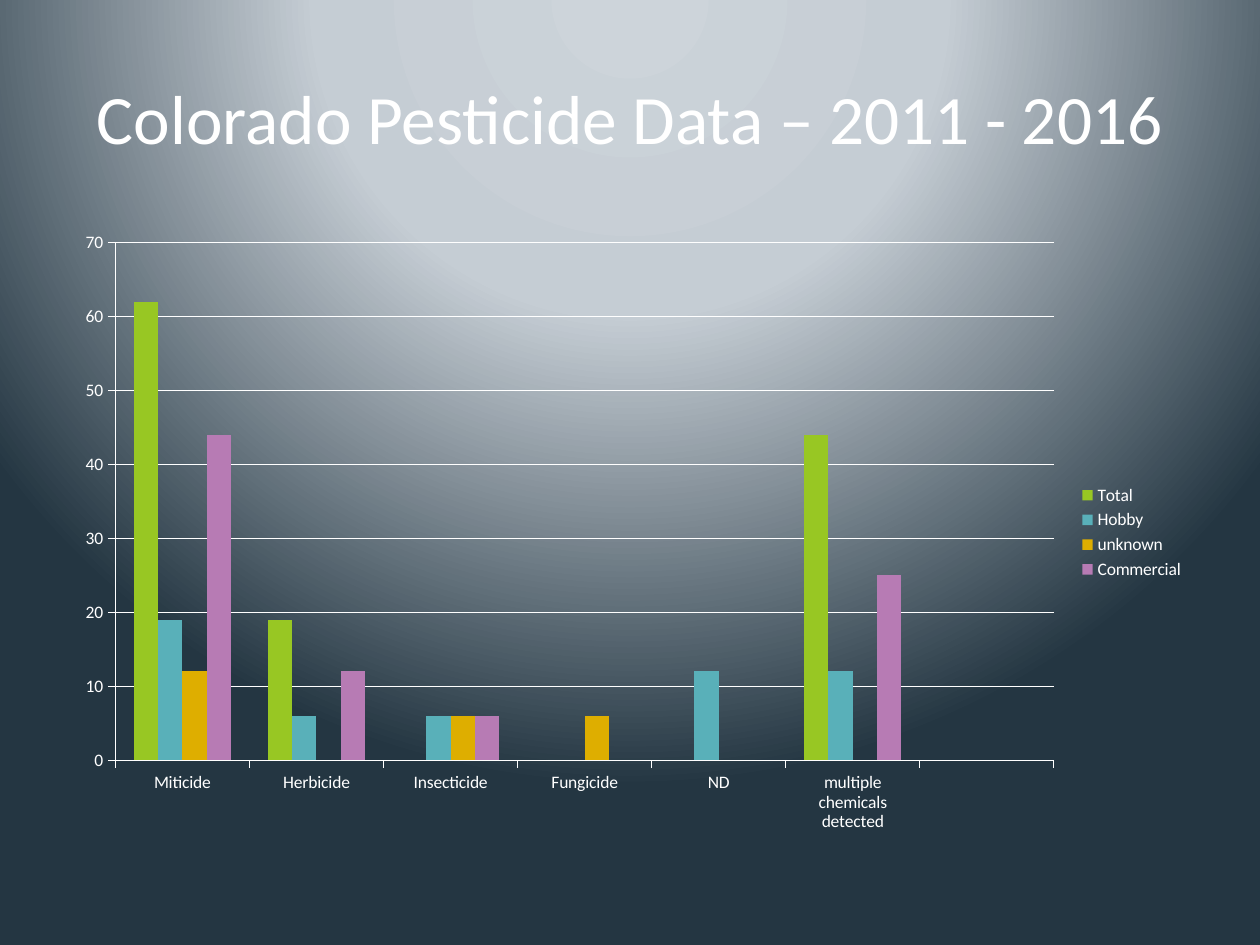
from lxml import etree
from pptx import Presentation
from pptx.chart.data import CategoryChartData as Data
from pptx.dml.color import RGBColor as RGB
from pptx.enum.chart import XL_CHART_TYPE as Kind, XL_LEGEND_POSITION as Side, XL_TICK_MARK as Tick
from pptx.enum.text import MSO_ANCHOR as Anchor, PP_ALIGN as Align
from pptx.util import Inches, Pt

FONT = "Calibri"
COLORS = {
    "text": "FFFFFF",
    "glow": "CDD4DA", "haze": "C5CDD4", "night": "243642",
    "Total": "98C723", "Hobby": "59B0B9", "unknown": "DEAE00", "Commercial": "B77BB4",
}
GROUPS = ["Miticide", "Herbicide", "Insecticide", "Fungicide", "ND",
          "multiple chemicals detected", ""]
SHARES = {
    "Total": [62, 19, None, None, None, 44, None],
    "Hobby": [19, 6, 6, None, 12, 12, None],
    "unknown": [12, None, 6, 6, None, None, None],
    "Commercial": [44, 12, 6, None, None, 25, None],
}
WHITE = RGB.from_string(COLORS["text"])


def style(font, size):
    font.name, font.size, font.bold = FONT, Pt(size), False
    font.color.rgb = WHITE


deck = Presentation()
deck.slide_width, deck.slide_height = Inches(10), Inches(7.5)
wide, high = deck.slide_width, deck.slide_height
left, span = int(wide * 0.05), int(wide * 0.9)
slide = deck.slides.add_slide(deck.slide_layouts[5])

# Radial background, centred above the top edge
slide.background.fill.gradient()
grad = slide.element.xpath(".//p:bgPr/a:gradFill")[0]
stops = "".join(
    f'<a:gs pos="{pos * 1000}"><a:srgbClr val="{COLORS[name]}"/></a:gs>'
    for pos, name in [(0, "glow"), (40, "haze"), (100, "night")])
grad.getparent().replace(grad, etree.fromstring(
    '<a:gradFill xmlns:a="http://schemas.openxmlformats.org/drawingml/2006/main" rotWithShape="1">'
    f'<a:gsLst>{stops}</a:gsLst><a:path path="circle">'
    '<a:fillToRect l="50000" t="-80000" r="50000" b="180000"/></a:path></a:gradFill>'))

# Title
title = slide.shapes.title
title.left, title.top = left, int(high * 0.04)
title.width, title.height = span, Inches(1.25)
frame = title.text_frame
frame.text = "Colorado Pesticide Data – 2011 - 2016"
frame.vertical_anchor = Anchor.MIDDLE
head = frame.paragraphs[0]
head.alignment = Align.CENTER
style(head.font, 39.6)

# Chart
data = Data()
data.categories = GROUPS
for name, vals in SHARES.items():
    data.add_series(name, vals)
chart = slide.shapes.add_chart(
    Kind.COLUMN_CLUSTERED, left, Inches(1.75), span, int(high * 0.66), data).chart
style(chart.font, 10)
chart.has_title = False
chart.has_legend = True
chart.legend.position = Side.RIGHT
chart.legend.include_in_layout = False

plot = chart.plots[0]
plot.gap_width, plot.overlap = 150, 0
plot.vary_by_categories = False
for bars in plot.series:
    bars.format.fill.solid()
    bars.format.fill.fore_color.rgb = RGB.from_string(COLORS[bars.name])
    bars.invert_if_negative = False

rise = chart.value_axis
rise.minimum_scale, rise.maximum_scale, rise.major_unit = 0, 70, 10
rise.has_major_gridlines = True
for axis in (chart.category_axis, rise):
    axis.major_tick_mark, axis.minor_tick_mark = Tick.OUTSIDE, Tick.NONE
for line in (chart.category_axis.format.line, rise.format.line,
             rise.major_gridlines.format.line):
    line.color.rgb = WHITE
    line.width = Pt(0.75)

deck.save("out.pptx")
